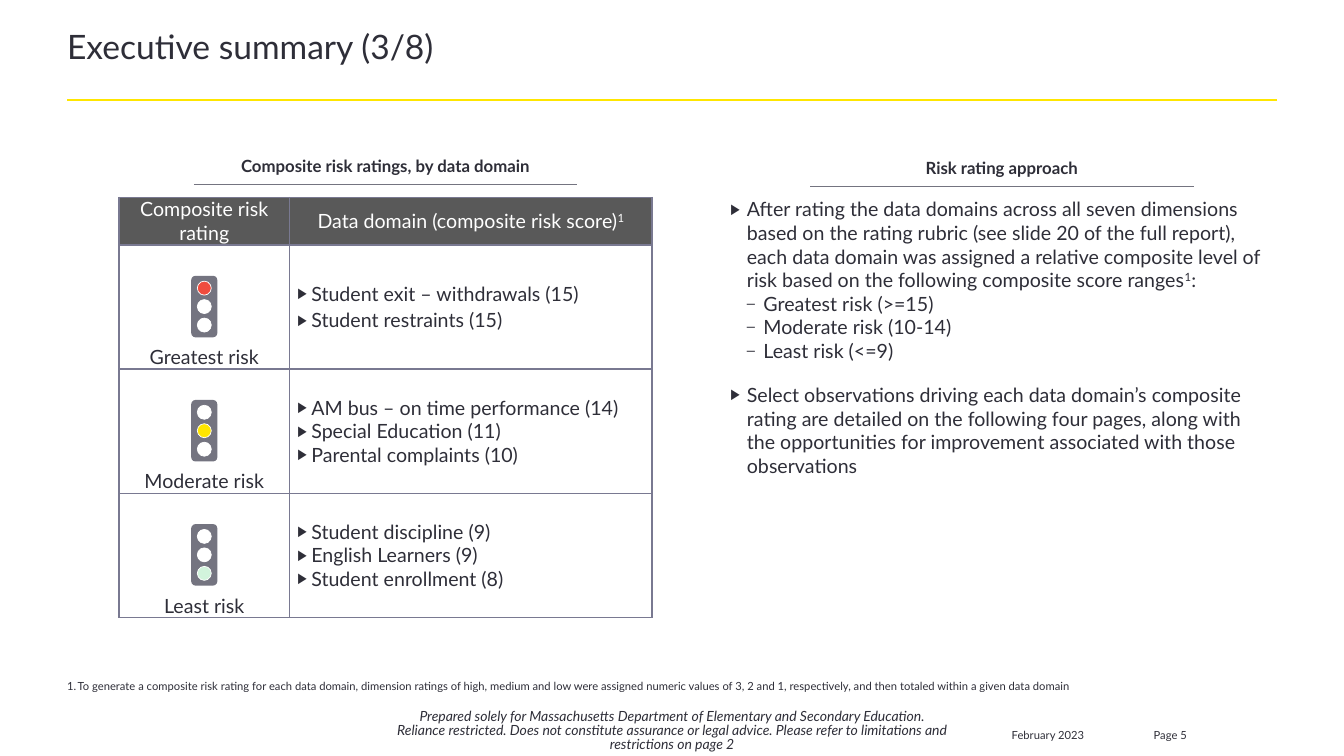
from lxml import etree
from pptx import Presentation
from pptx.dml.color import RGBColor
from pptx.enum.shapes import MSO_CONNECTOR, MSO_SHAPE
from pptx.enum.text import MSO_ANCHOR, PP_ALIGN
from pptx.oxml.ns import qn
from pptx.util import Pt

LEFT, CENTER = PP_ALIGN.LEFT, PP_ALIGN.CENTER
TOP, MIDDLE, BOTTOM = MSO_ANCHOR.TOP, MSO_ANCHOR.MIDDLE, MSO_ANCHOR.BOTTOM
LINE = MSO_CONNECTOR.STRAIGHT
ROUND, OVAL = MSO_SHAPE.ROUNDED_RECTANGLE, MSO_SHAPE.OVAL
FONT = "Lato"
COLORS = {
    "ink": "2E2E38", "white": "FFFFFF", "yellow": "FFE600", "gray": "747480",
    "head": "595959", "grid": "797991", "red": "F04C3E", "green": "D2F4DC",
}
ARROW, DASH = "▶", "–"
RISKS = [
    ("Greatest risk", "red",
     ["Student exit – withdrawals (15)", "Student restraints (15)"], 2),
    ("Moderate risk", "yellow",
     ["AM bus – on time performance (14)", "Special Education (11)",
      "Parental complaints (10)"], 0),
    ("Least risk", "green",
     ["Student discipline (9)", "English Learners (9)",
      "Student enrollment (8)"], 0),
]
APPROACH = [
    ("After rating the data domains across all seven dimensions based on the "
     "rating rubric (see slide 20 of the full report), each data domain was "
     "assigned a relative composite level of risk based on the following "
     "composite score ranges^1^:", 0, 0),
    ("Greatest risk (>=15)", 1, 0),
    ("Moderate risk (10-14)", 1, 0),
    ("Least risk (<=9)", 1, 15),
    ("Select observations driving each data domain’s composite rating are "
     "detailed on the following four pages, along with the opportunities for "
     "improvement associated with those observations", 0, 0),
]


def rgb(name):
    return RGBColor.from_string(COLORS[name])


def write(para, text, size, color="ink", align=LEFT, bold=False, italic=False):
    """Set the paragraph's text; parts between carets are superscript."""
    first, *rest = text.split("^")
    para.text = first
    para.alignment = align
    for part in rest:
        para.add_run().text = part
    for i, run in enumerate(para.runs):
        font = run.font
        font.name, font.size = FONT, Pt(size)
        font.bold, font.italic = bold, italic
        font.color.rgb = rgb(color)
        if i % 2:
            run._r.get_or_add_rPr().set("baseline", "30000")


def bullet(para, mark, left, hang):
    """Give a hanging bullet, or a number where mark is None."""
    props = para._p.get_or_add_pPr()
    props.set("marL", str(Pt(left)))
    props.set("indent", str(-Pt(hang)))
    if mark is None:
        etree.SubElement(props, qn("a:buAutoNum"), type="arabicPeriod")
        return
    etree.SubElement(props, qn("a:buSzPct"), val="75000")
    etree.SubElement(props, qn("a:buFont"), typeface="Arial")
    etree.SubElement(props, qn("a:buChar"), char=mark)


def frame(slide, x, y, w, h, anchor=TOP, pad=(0, 0, 0, 0)):
    """Add a wrapping text box and return its text frame."""
    tf = slide.shapes.add_textbox(Pt(x), Pt(y), Pt(w), Pt(h)).text_frame
    tf.word_wrap = True
    tf.vertical_anchor = anchor
    tf.margin_left, tf.margin_top, tf.margin_right, tf.margin_bottom = map(Pt, pad)
    return tf


def rule(slide, x, y, w, color, weight):
    line = slide.shapes.add_connector(LINE, Pt(x), Pt(y), Pt(x + w), Pt(y))
    line.line.color.rgb = rgb(color)
    line.line.width = Pt(weight)
    etree.SubElement(line._element.spPr, qn("a:effectLst"))


def title(slide, x, y, w, h):
    para = frame(slide, x, y, w, h).paragraphs[0]
    write(para, "Executive summary (3/8)", 24)
    para.line_spacing = 0.85
    rule(slide, x, y + h + 1.5, w, "yellow", 1.5)


def heading(slide, text, x, y, w, h):
    tf = frame(slide, x, y, w, h, BOTTOM, (0, 0, 0, 6))
    write(tf.paragraphs[0], text, 12, align=CENTER, bold=True)
    rule(slide, x, y + h + 0.5, w, "gray", 0.75)


def style(cell, fill, anchor):
    cell.margin_left = cell.margin_right = Pt(5.5)
    cell.margin_top = cell.margin_bottom = 0
    cell.vertical_anchor = anchor
    props = cell._tc.get_or_add_tcPr()
    for side in ("lnL", "lnR", "lnT", "lnB"):
        edge = etree.SubElement(props, qn("a:" + side), w=str(Pt(1)))
        paint = etree.SubElement(edge, qn("a:solidFill"))
        etree.SubElement(paint, qn("a:srgbClr"), val=COLORS["grid"])
    cell.fill.solid()
    cell.fill.fore_color.rgb = rgb(fill)


def light(slide, x, y, w, h, lit, color):
    """Draw a traffic light whose lamp number lit is coloured."""
    group = slide.shapes.add_group_shape()

    def part(kind, left, top, wide, high, fill):
        shape = group.shapes.add_shape(kind, Pt(left), Pt(top), Pt(wide), Pt(high))
        shape.shadow.inherit = False
        shape.fill.solid()
        shape.fill.fore_color.rgb = rgb(fill)
        return shape

    part(ROUND, x, y, w, h, "gray").line.fill.background()
    size, gap = 10, 3.2
    edge = (h - 3 * size - 2 * gap) / 2
    for i in range(3):
        lamp = part(OVAL, x + (w - size) / 2, y + edge + i * (size + gap),
                    size, size, color if i == lit else "white")
        lamp.line.color.rgb = rgb("white")
        lamp.line.width = Pt(0.5)


def ratings(slide, x, y, w, h):
    head, side = 34, 122
    row = (h - head) / len(RISKS)
    table = slide.shapes.add_table(len(RISKS) + 1, 2, Pt(x), Pt(y), Pt(w), Pt(h)).table
    table.horz_banding = False
    table.columns[0].width, table.columns[1].width = Pt(side), Pt(w - side)
    table.rows[0].height = Pt(head)
    names = ("Composite risk rating", "Data domain (composite risk score)^1^")
    for i, text in enumerate(names):
        cell = table.cell(0, i)
        style(cell, "head", MIDDLE)
        write(cell.text_frame.paragraphs[0], text, 14, "white", CENTER)
    for i, (risk, color, items, gap) in enumerate(RISKS):
        table.rows[i + 1].height = Pt(row)
        label, domain = table.cell(i + 1, 0), table.cell(i + 1, 1)
        style(label, "white", BOTTOM)
        write(label.text_frame.paragraphs[0], risk, 14, align=CENTER)
        style(domain, "white", MIDDLE)
        domain.text_frame.text = "\n".join(items)
        for para, item in zip(domain.text_frame.paragraphs, items):
            write(para, item, 14)
            para.space_after = Pt(gap)
            bullet(para, ARROW, 10, 10)
        light(slide, x + (side - 18.7) / 2, y + head + i * row + 22, 18.7, 44, i, color)


def approach(slide, x, y, w, h):
    tf = frame(slide, x, y, w, h)
    tf.text = "\n".join(text for text, _, _ in APPROACH)
    for para, (text, level, gap) in zip(tf.paragraphs, APPROACH):
        write(para, text, 14)
        para.level = level
        para.space_after = Pt(gap)
        bullet(para, DASH if level else ARROW, 11.8 * (level + 1), 11.8)


def footer(slide, x, y, w, h):
    note = frame(slide, x, y, 786, 18, BOTTOM).paragraphs[0]
    write(note, "To generate a composite risk rating for each data domain, "
          "dimension ratings of high, medium and low were assigned numeric values "
          "of 3, 2 and 1, respectively, and then totaled within a given data domain", 8)
    bullet(note, None, 7.5, 7.5)
    legal = frame(slide, x + 233.5, y + h - 36, 397.5, 34, pad=(0, 3, 0, 0)).paragraphs[0]
    write(legal, "Prepared solely for Massachusetts Department of Elementary and "
          "Secondary Education. Reliance restricted. Does not constitute assurance "
          "or legal advice. Please refer to limitations and restrictions on page 2",
          10, align=CENTER, italic=True)
    legal.line_spacing = 0.85
    for text, left in (("February 2023", 675), ("Page 5", 776.5)):
        tf = frame(slide, x + left, y + h - 19.5, w - left, 10)
        write(tf.paragraphs[0], text, 8)


def main():
    deck = Presentation()
    deck.slide_width, deck.slide_height = Pt(960.5), Pt(540)
    slide = deck.slides.add_slide(deck.slide_layouts[6])
    title(slide, 48, 23, 864.5, 47)
    heading(slide, "Composite risk ratings, by data domain", 138.5, 111.5, 274, 20)
    ratings(slide, 85, 141, 381, 300)
    heading(slide, "Risk rating approach", 579, 113, 274, 20)
    approach(slide, 522, 141, 380, 219)
    footer(slide, 48, 476.5, 864.5, 63.5)
    deck.save("out.pptx")


if __name__ == "__main__":
    main()
